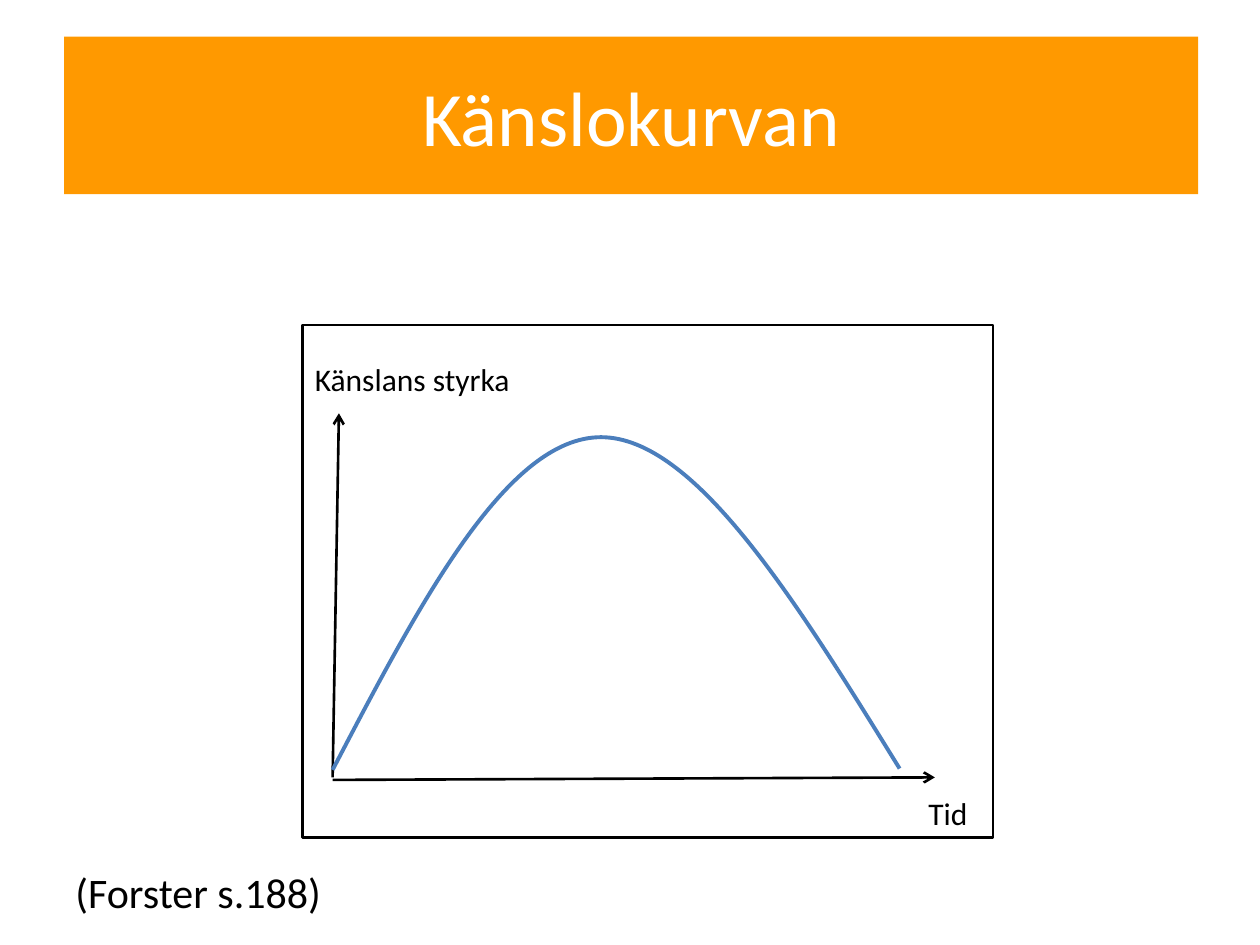
"""Build the slide "Känslokurvan" with a hand-drawn emotion curve."""
from pptx import Presentation
from pptx.dml.color import RGBColor
from pptx.enum.shapes import MSO_CONNECTOR, MSO_SHAPE
from pptx.enum.text import MSO_ANCHOR, PP_ALIGN
from pptx.oxml.ns import qn
from pptx.util import Inches, Pt
from lxml import etree

RECT = MSO_SHAPE.RECTANGLE
STRAIGHT = MSO_CONNECTOR.STRAIGHT
MIDDLE = MSO_ANCHOR.MIDDLE
CENTER = PP_ALIGN.CENTER


def rgb(value):
    return RGBColor.from_string(value)


def write(sp, text, size, color):
    p = sp.text_frame.paragraphs[0]
    p.text = text
    font = p.runs[0].font
    font.name = "Calibri"
    font.size = Pt(size)
    font.color.rgb = rgb(color)


prs = Presentation()
prs.slide_width, prs.slide_height = Inches(10), Inches(7.5)
s = prs.slides.add_slide(prs.slide_layouts[6])

frame = s.shapes.add_shape(RECT, Inches(2.4), Inches(2.58), Inches(5.48), Inches(4.07))
frame.shadow.inherit = False
frame.fill.solid()
frame.fill.fore_color.rgb = rgb("FFFFFF")
frame.line.color.rgb = rgb("000000")
frame.line.width = Pt(1.5)

for ends in [(2.64, 6.17, 2.69, 3.28), (2.64, 6.19, 7.42, 6.17)]:
    axis = s.shapes.add_connector(STRAIGHT, *[Inches(v) for v in ends])
    axis.line.color.rgb = rgb("000000")
    axis.line.width = Pt(1.5)
    etree.SubElement(axis.line._get_or_add_ln(), qn("a:tailEnd"), type="arrow")
    etree.SubElement(axis._element.spPr, qn("a:effectLst"))

points = [(2.64, 6.11), (3.33, 4.79), (4.02, 3.47), (4.77, 3.47),
          (5.52, 3.47), (6.33, 4.79), (7.14, 6.1)]
start, *rest = [(Inches(x), Inches(y)) for x, y in points]
builder = s.shapes.build_freeform(*start)
builder.add_line_segments(rest, close=False)
curve = builder.convert_to_shape()
curve.shadow.inherit = False
curve.fill.background()
curve.line.color.rgb = rgb("4B7EBC")
curve.line.width = Pt(2.25)
segments = curve._element.xpath(".//a:lnTo")
for i in range(0, len(segments), 3):
    bezier = etree.Element(qn("a:cubicBezTo"))
    segments[i].addprevious(bezier)
    for segment in segments[i:i + 3]:
        bezier.append(segment[0])
        segment.getparent().remove(segment)

labels = [
    ("Känslans styrka", 18, True, (2.4, 2.81, 2.19, 0.4)),
    ("Tid", 18, True, (7.27, 6.25, 1.33, 0.4)),
    ("(Forster s.188)", 24, False, (0.5, 6.83, 2.24, 0.5)),
]
for text, size, wrap, box in labels:
    label = s.shapes.add_textbox(*[Inches(v) for v in box])
    label.text_frame.word_wrap = wrap
    write(label, text, size, "000000")

title = s.shapes.add_shape(RECT, Inches(0.51), Inches(0.29), Inches(9), Inches(1.25))
title.shadow.inherit = False
title.fill.solid()
title.fill.fore_color.rgb = rgb("FF9900")
title.line.fill.background()
title.text_frame.vertical_anchor = MIDDLE
write(title, "Känslokurvan", 44, "FFFFFF")
title.text_frame.paragraphs[0].alignment = CENTER

prs.save("out.pptx")
